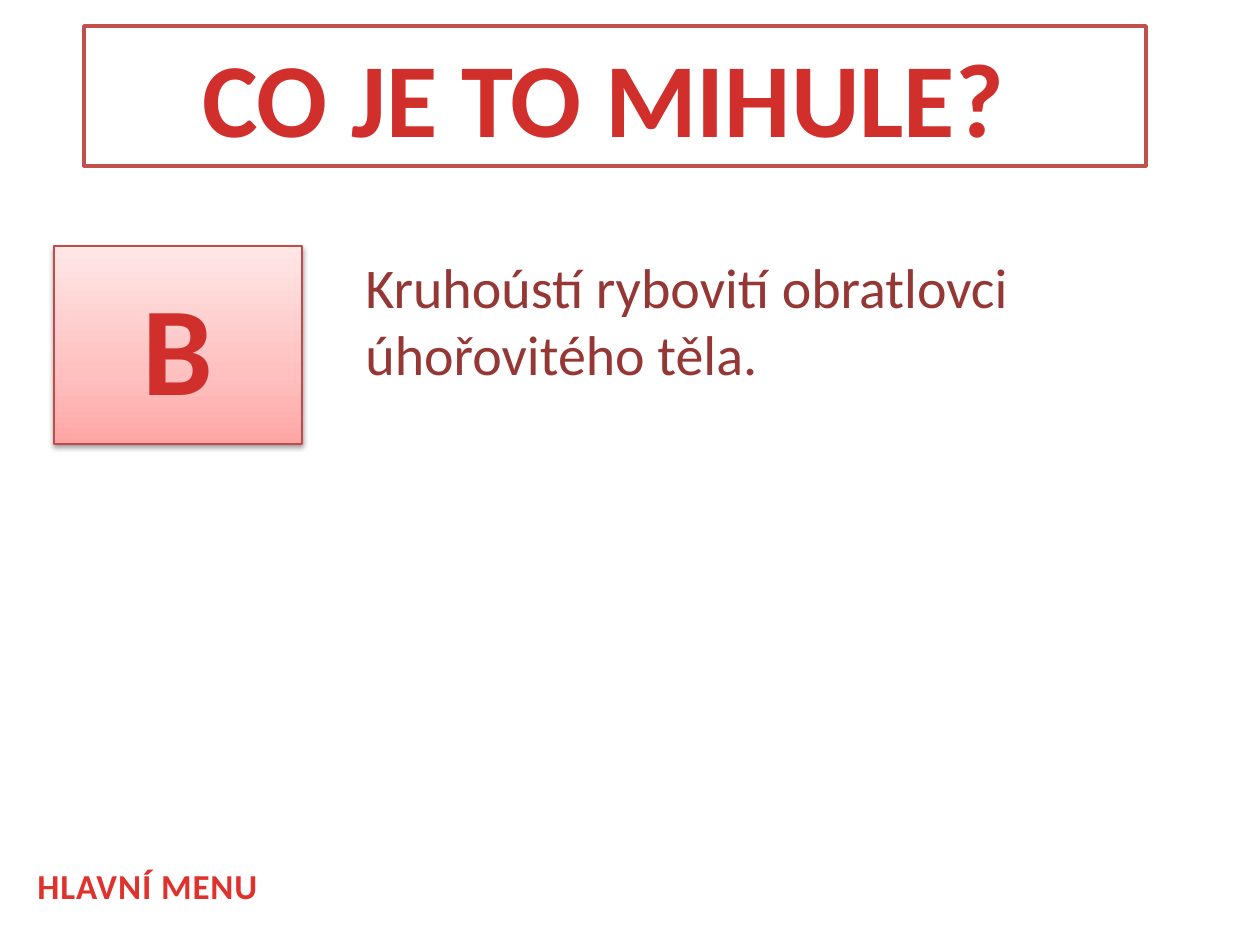
from copy import deepcopy
from dataclasses import dataclass

from lxml.etree import SubElement
from pptx import Presentation
from pptx.dml.color import RGBColor
from pptx.enum.shapes import MSO_SHAPE as Preset
from pptx.enum.text import MSO_ANCHOR as Anchor, PP_ALIGN as Align
from pptx.oxml.ns import qn
from pptx.shapes.autoshape import Shape
from pptx.slide import Slide
from pptx.util import Inches, Pt

PX = Inches(1) / 126
WHITE = RGBColor(0xFF, 0xFF, 0xFF)
RED = RGBColor(0xD0, 0x2F, 0x2C)
MENU_RED = RGBColor(0xE0, 0x32, 0x2D)
DARK_RED = RGBColor(0x95, 0x37, 0x35)
TITLE_LINE = RGBColor(0xC0, 0x50, 0x4D)
BADGE_LINE = RGBColor(0xBF, 0x4C, 0x48)
BADGE_STOPS = (
    (0, RGBColor(0xFF, 0xA6, 0xA5)),
    (0.35, RGBColor(0xFF, 0xC0, 0xBF)),
    (1, RGBColor(0xFF, 0xE7, 0xE7)),
)


@dataclass(frozen=True)
class Label:
    text: str
    left: int
    top: int
    width: int
    height: int
    size: int
    color: RGBColor
    bold: bool = True
    align: Align = Align.LEFT
    anchor: Anchor = Anchor.TOP
    spacing: float = 0


TITLE = Label("CO JE TO MIHULE? ", 84, 26, 1062, 140, 60, RED, align=Align.CENTER)
BADGE = Label("B", 54, 246, 248, 198, 72, RED, align=Align.CENTER, anchor=Anchor.MIDDLE)
ANSWER = Label("Kruhoústí rybovití obratlovci úhořovitého těla.",
               353, 246, 883, 149, 32, DARK_RED, bold=False)
MENU = Label("HLAVNÍ MENU", 25, 858, 362, 55, 20, MENU_RED, spacing=0.5)


def px(value: int) -> int:
    return round(value * PX)


def bounds(label: Label) -> tuple[int, ...]:
    return tuple(map(px, (label.left, label.top, label.width, label.height)))


def write(shape: Shape, label: Label) -> None:
    frame = shape.text_frame
    frame.word_wrap = True
    frame.vertical_anchor = label.anchor
    paragraph = frame.paragraphs[0]
    paragraph.alignment = label.align
    run = paragraph.add_run()
    run.text = label.text
    font = paragraph.font
    font.name = "Calibri"
    font.size = Pt(label.size)
    font.bold = label.bold
    font.color.rgb = label.color
    if label.spacing:
        run._r.get_or_add_rPr().set("spc", str(round(label.spacing * 100)))


def add_text(slide: Slide, label: Label) -> None:
    write(slide.shapes.add_textbox(*bounds(label)), label)


def add_box(slide: Slide, label: Label, line: RGBColor, line_width: float) -> Shape:
    shape = slide.shapes.add_shape(Preset.RECTANGLE, *bounds(label))
    shape.shadow.inherit = False
    shape.line.color.rgb = line
    shape.line.width = Pt(line_width)
    write(shape, label)
    return shape


def fill_gradient(shape: Shape) -> None:
    shape.fill.gradient()
    shape.fill.gradient_angle = 90
    stop_list = shape._element.spPr.find(qn("a:gradFill")).find(qn("a:gsLst"))
    stop_list.insert(1, deepcopy(stop_list[0]))
    for stop, (position, color) in zip(shape.fill.gradient_stops, BADGE_STOPS):
        stop.position = position
        stop.color.rgb = color


def add_shadow(shape: Shape) -> None:
    effects = shape._element.spPr.find(qn("a:effectLst"))
    shadow = SubElement(effects, qn("a:outerShdw"), blurRad="40000", dist="20000",
                        dir="5400000", rotWithShape="0")
    color = SubElement(shadow, qn("a:srgbClr"), val="000000")
    SubElement(color, qn("a:alpha"), val="38000")


def main() -> None:
    presentation = Presentation()
    presentation.slide_width = Inches(10)
    presentation.slide_height = Inches(7.5)
    slide = presentation.slides.add_slide(presentation.slide_layouts[6])

    title = add_box(slide, TITLE, TITLE_LINE, 2)
    title.fill.solid()
    title.fill.fore_color.rgb = WHITE

    badge = add_box(slide, BADGE, BADGE_LINE, 0.75)
    fill_gradient(badge)
    add_shadow(badge)

    for label in (ANSWER, MENU):
        add_text(slide, label)
    presentation.save("out.pptx")


if __name__ == "__main__":
    main()
